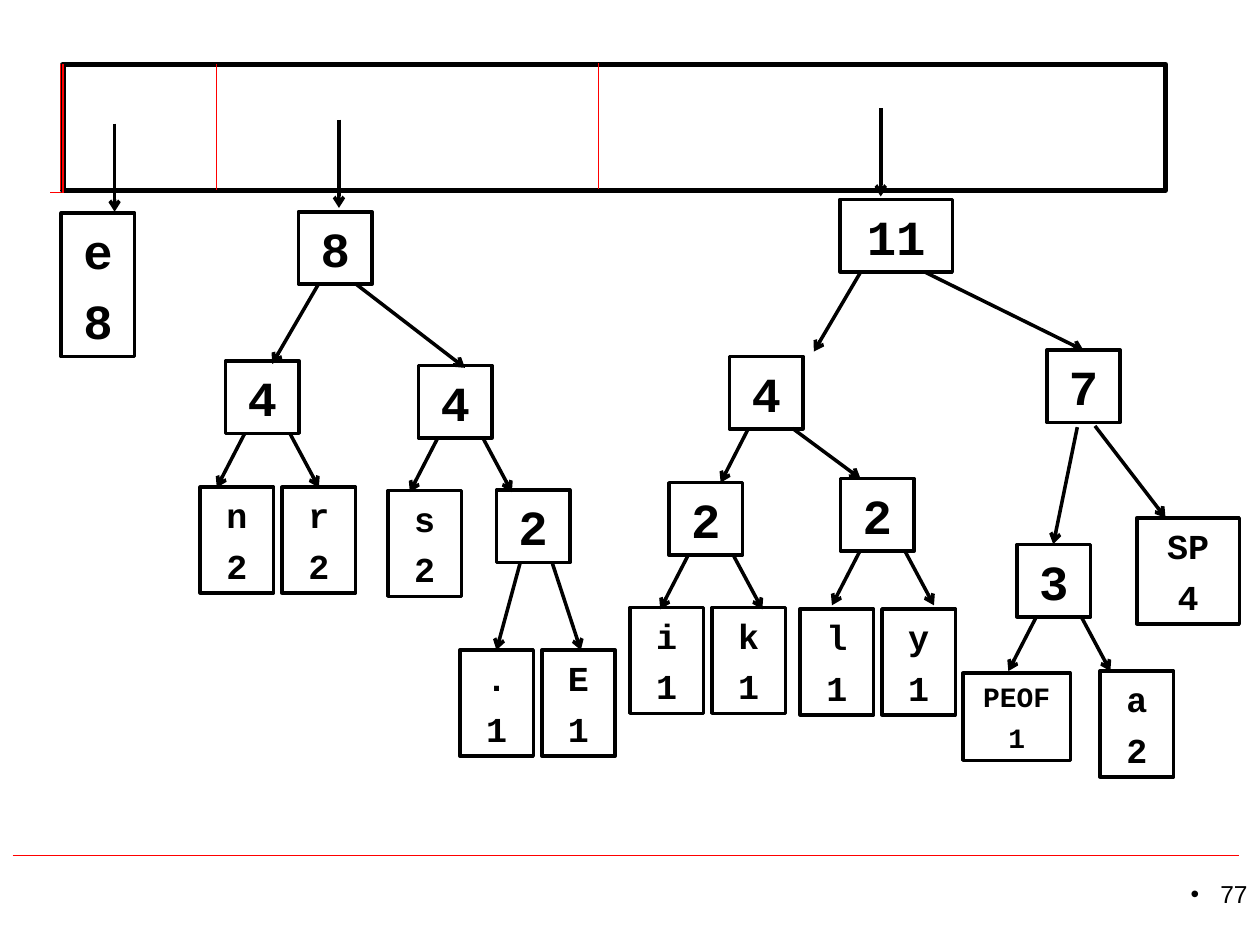
"""Build the slide of weighted character trees hanging from a priority queue."""
from lxml import etree
from pptx import Presentation
from pptx.dml.color import RGBColor
from pptx.enum.shapes import MSO_CONNECTOR, MSO_SHAPE
from pptx.enum.text import MSO_ANCHOR, PP_ALIGN
from pptx.oxml.ns import qn
from pptx.util import Pt

RECT = MSO_SHAPE.RECTANGLE
STRAIGHT = MSO_CONNECTOR.STRAIGHT
MIDDLE = MSO_ANCHOR.MIDDLE
CENTER, RIGHT = PP_ALIGN.CENTER, PP_ALIGN.RIGHT

BLACK, RED = "000000", "FF0000"
BOX_W, NODE_H, LEAF_H = 42, 41.4, 60.5

QUEUE = (36, 36.7, 630, 72)
RULES = [
    (28.8, 110.2, 661.7, 110.2),
    (7.2, 488.9, 707.8, 488.9),
]
DIVIDERS = [
    (36, 36.7, 36, 110.2),
    (34.6, 36.7, 34.6, 108.7),
    (123.8, 36.7, 123.8, 108.7),
    (342, 36, 342, 108),
]
NODES = [
    ("8", 170.6, 121, BOX_W),
    ("4", 128.9, 206.2, BOX_W),
    ("4", 239.2, 208.8, BOX_W),
    ("2", 283.7, 280, BOX_W),
    ("11", 480.1, 113.9, 64.1),
    ("4", 416.9, 203.6, BOX_W),
    ("7", 598.2, 200, BOX_W),
    ("2", 382.3, 275.8, BOX_W),
    ("2", 480.4, 273.5, BOX_W),
    ("3", 581.2, 311.1, BOX_W),
]
LEAVES = [
    ("n", "2", 114.4, 278.4),
    ("r", "2", 161.2, 278.4),
    ("s", "2", 221.7, 280.3),
    (".", "1", 262.8, 371.5),
    ("E", "1", 309.6, 371.5),
    ("i", "1", 360, 347.2),
    ("k", "1", 406.8, 347.2),
    ("l", "1", 457.2, 348),
    ("y", "1", 504, 348),
    ("a", "2", 628.6, 383.5),
]
WIDE_LEAVES = [
    ("e", "8", 35, 121.7, BOX_W, 82, 28),
    ("PEOF", "1", 550.3, 384.7, 61.4, 49.8, 16),
    ("SP", "4", 649.6, 296, 58.6, LEAF_H, 20),
]
FORKS = [(128.9, 206.2), (239.2, 208.8), (382.3, 275.8), (480.4, 273.5), (581.2, 311.1)]
LEFT_BRANCH, RIGHT_BRANCH = (11, 41.4, -5, 72.4), (36.7, 41.4, 53.3, 72.4)
ARROWS = [
    (65.5, 70.6, 65.5, 121),
    (193.7, 68.4, 193.7, 118.8),
    (503.3, 61.9, 503.3, 112.3),
    (182.2, 162, 155.5, 208),
    (203, 162, 265.7, 210.2),
    (297.4, 321.1, 283.7, 371.5),
    (315.4, 321.1, 331.9, 371.5),
    (491.8, 155.5, 465.1, 200.9),
    (528.5, 155.5, 619.2, 200.2),
    (427.7, 244.8, 411.8, 275.8),
    (452.9, 244.8, 491.8, 273.6),
    (615.6, 244.1, 601.9, 311),
    (625.7, 243.4, 666, 295.9),
]


def rgb(value):
    return RGBColor.from_string(value)


def apply(obj, values):
    for name, value in values.items():
        setattr(obj, name, value)


class Deck:
    frame = {"word_wrap": False, "vertical_anchor": MIDDLE,
             "margin_top": 0, "margin_bottom": 0}
    label = {"name": "Courier New", "bold": True}
    number = {"name": "Arial", "size": Pt(14)}

    def __init__(self, prs):
        self.s = prs.slides.add_slide(prs.slide_layouts[6])

    def box(self, x, y, w, h, lines=(), size=20, weight=2):
        sp = self.s.shapes.add_shape(RECT, Pt(x), Pt(y), Pt(w), Pt(h))
        sp.shadow.inherit = False
        sp.fill.background()
        sp.line.color.rgb = rgb(BLACK)
        sp.line.width = Pt(weight)
        tf = sp.text_frame
        apply(tf, self.frame)
        for i, text in enumerate(lines):
            p = tf.add_paragraph() if i else tf.paragraphs[0]
            apply(p, {"alignment": CENTER, "space_before": Pt(round(size * 0.24, 2))})
            r = p.add_run()
            r.text = text
            apply(r.font, {**self.label, "size": Pt(size)})
            r.font.color.rgb = rgb(BLACK)

    def line(self, x1, y1, x2, y2, color=RED, weight=0.75):
        sp = self.s.shapes.add_connector(STRAIGHT, Pt(x1), Pt(y1), Pt(x2), Pt(y2))
        sp.line.color.rgb = rgb(color)
        sp.line.width = Pt(weight)
        etree.SubElement(sp._element.spPr, qn("a:effectLst"))
        return sp

    def arrow(self, *ends):
        sp = self.line(*ends, color=BLACK, weight=2)
        etree.SubElement(sp.line._get_or_add_ln(), qn("a:tailEnd"), type="arrow")

    def branch(self, x, y, offsets):
        x1, y1, x2, y2 = offsets
        self.arrow(x + x1, y + y1, x + x2, y + y2)

    def page_number(self, text, x, y, w, h):
        tf = self.s.shapes.add_textbox(Pt(x), Pt(y), Pt(w), Pt(h)).text_frame
        tf.word_wrap = True
        p = tf.paragraphs[0]
        p.alignment = RIGHT
        pPr = p._p.get_or_add_pPr()
        pPr.set("marL", str(Pt(17)))
        pPr.set("indent", str(-Pt(17)))
        etree.SubElement(pPr, qn("a:buFont"), typeface="Arial")
        etree.SubElement(pPr, qn("a:buChar"), char="•")
        r = p.add_run()
        r.text = text
        apply(r.font, self.number)
        r.font.color.rgb = rgb(BLACK)


def main():
    prs = Presentation()
    apply(prs, {"slide_width": Pt(720), "slide_height": Pt(540)})
    deck = Deck(prs)
    for ends in RULES:
        deck.line(*ends)
    deck.page_number("77", 552.2, 499, 167.8, 37.4)
    deck.box(*QUEUE, weight=3)
    for ends in DIVIDERS:
        deck.line(*ends)
    for text, x, y, w in NODES:
        deck.box(x, y, w, NODE_H, [text], 28)
    for char, count, x, y in LEAVES:
        deck.box(x, y, BOX_W, LEAF_H, [char, count])
    for char, count, x, y, w, h, size in WIDE_LEAVES:
        deck.box(x, y, w, h, [char, count], size)
    for x, y in FORKS:
        deck.branch(x, y, LEFT_BRANCH)
        deck.branch(x, y, RIGHT_BRANCH)
    for ends in ARROWS:
        deck.arrow(*ends)
    prs.save("out.pptx")


if __name__ == "__main__":
    main()
